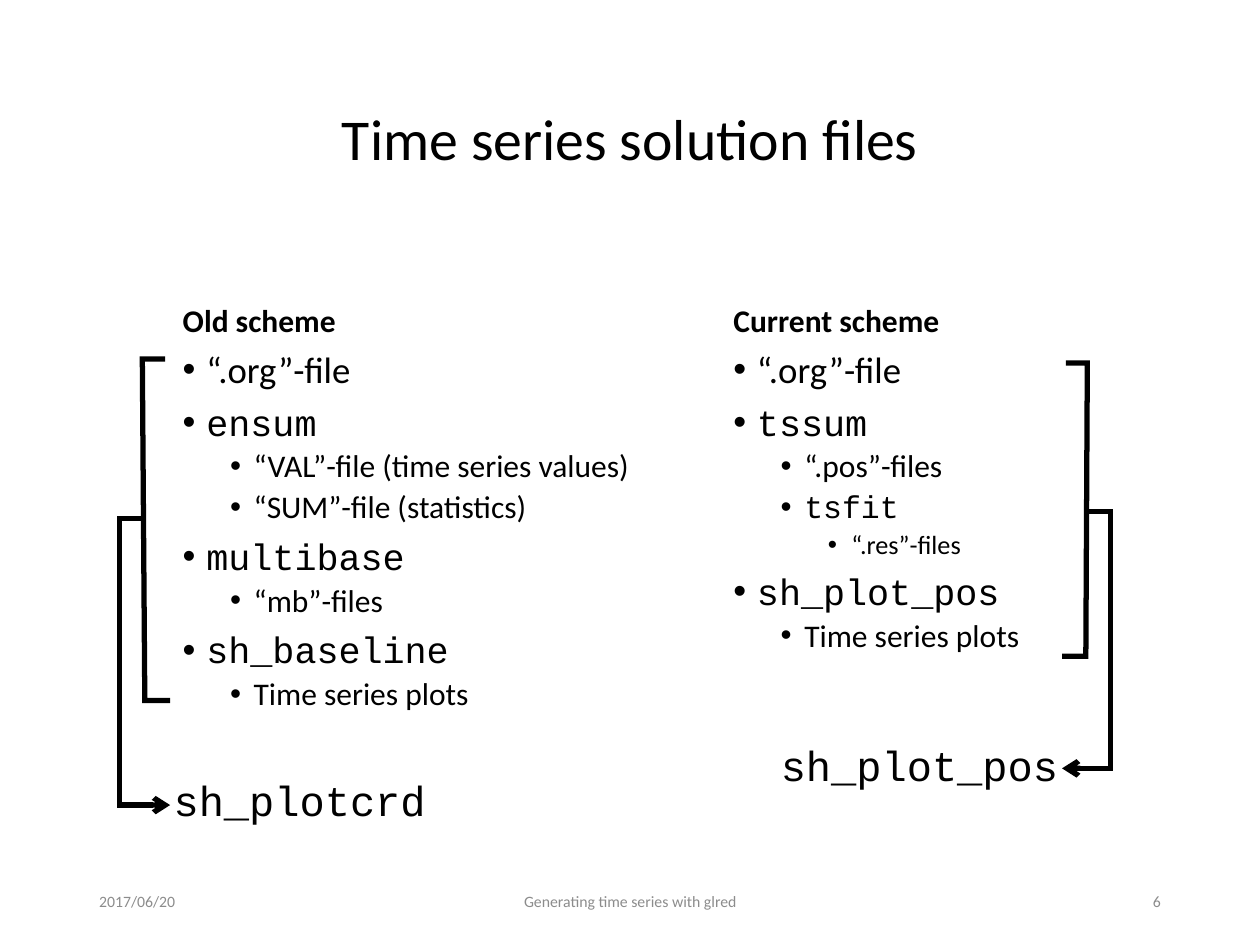
from lxml.etree import SubElement as Sub
from pptx import Presentation
from pptx.dml.color import RGBColor
from pptx.enum.text import MSO_ANCHOR as Anchor, MSO_AUTO_SIZE as Fit, PP_ALIGN as Align
from pptx.oxml.ns import qn
from pptx.util import Cm, Pt

BLACK = RGBColor(0x00, 0x00, 0x00)
GREY = RGBColor(0x8C, 0x8C, 0x8C)
SANS, MONO = "Calibri", "Courier New"
SIZES = (21, 18, 15)  # list text, by level

# List items: level, text, font
OLD = [
    (0, "“.org”-file", SANS),
    (0, "ensum", MONO),
    (1, "“VAL”-file (time series values)", SANS),
    (1, "“SUM”-file (statistics)", SANS),
    (0, "multibase", MONO),
    (1, "“mb”-files", SANS),
    (0, "sh_baseline", MONO),
    (1, "Time series plots", SANS),
]
NEW = [
    (0, "“.org”-file", SANS),
    (0, "tssum", MONO),
    (1, "“.pos”-files", SANS),
    (1, "tsfit", MONO),
    (2, "“.res”-files", SANS),
    (0, "sh_plot_pos", MONO),
    (1, "Time series plots", SANS),
]


def style(para, size, font=SANS, color=BLACK, bold=False):
    for run in para.runs:
        run.font.size = Pt(size)
        run.font.name = font
        run.font.color.rgb = color
        run.font.bold = bold


def place(shape, box, anchor):
    shape.left, shape.top, shape.width, shape.height = map(Cm, box)
    frame = shape.text_frame
    frame.auto_size = Fit.NONE
    frame.word_wrap = True
    frame.vertical_anchor = anchor
    return frame


def add_head(holder, box, text, size, anchor, align, bold=False):
    frame = place(holder, box, anchor)
    frame.text = text
    para = frame.paragraphs[0]
    para.alignment = align
    para.line_spacing = 0.9
    para.space_before = Pt(7.5 if bold else 0)
    style(para, size, bold=bold)


def add_list(holder, box, items):
    frame = place(holder, box, Anchor.TOP)
    for num, (level, text, font) in enumerate(items):
        para = frame.add_paragraph() if num else frame.paragraphs[0]
        para.text = text
        para.level = level
        para.line_spacing = 0.9
        para.space_before = Pt(3.8 if level else 7.5)
        style(para, SIZES[level], font)
        # Bullet with hanging indent
        props = para._p.get_or_add_pPr()
        props.set("marL", str(Pt(13.5 + 27 * level)))
        props.set("indent", str(-Pt(13.5)))
        Sub(props, qn("a:buFont"), typeface="Arial")
        Sub(props, qn("a:buChar"), char="•")


def add_text(slide, box, text, size, font=SANS, color=BLACK,
             align=Align.LEFT, anchor=Anchor.MIDDLE, wrap=True):
    frame = place(slide.shapes.add_textbox(0, 0, 0, 0), box, anchor)
    frame.word_wrap = wrap
    frame.text = text
    para = frame.paragraphs[0]
    para.alignment = align
    style(para, size, font, color)


def add_line(slide, points, arrow=False):
    first, *rest = [(Cm(x), Cm(y)) for x, y in points]
    pen = slide.shapes.build_freeform(*first)
    pen.add_line_segments(rest, close=False)
    shape = pen.convert_to_shape()
    shape.shadow.inherit = False
    shape.fill.background()
    shape.line.color.rgb = BLACK
    shape.line.width = Pt(3)
    ln = shape.line._get_or_add_ln()
    Sub(ln, qn("a:miter"), lim="800000")
    if arrow:
        Sub(ln, qn("a:tailEnd"), type="arrow")


def main():
    deck = Presentation()
    deck.slide_width, deck.slide_height = Cm(25.4), Cm(19.05)
    slide = deck.slides.add_slide(deck.slide_layouts[4])  # comparison
    title, *cols = slide.placeholders

    # Title and the two columns
    add_head(title, (1.75, 1.02, 21.9, 3.68), "Time series solution files",
             33, Anchor.MIDDLE, Align.CENTER)
    parts = [("Old scheme", OLD, 3.43, 10.74), ("Current scheme", NEW, 14.53, 10.8)]
    for (head, items, left, width), top, body in zip(parts, cols[::2], cols[1::2]):
        add_head(top, (left, 4.67, width, 2.29), head, 18,
                 Anchor.BOTTOM, Align.LEFT, bold=True)
        add_list(body, (left, 6.96, width, 10.24), items)

    # Footer
    for left, width, text, align in [
        (1.75, 5.72, "2017/06/20", Align.LEFT),
        (8.41, 8.59, "Generating time series with glred", Align.CENTER),
        (17.93, 5.72, "6", Align.RIGHT),
    ]:
        add_text(slide, (left, 17.65, width, 1.02), text, 9, color=GREY, align=align)

    # Plot scripts
    for box, text in [
        ((3.25, 15.49, 5.64, 1.27), "sh_plotcrd"),
        ((15.49, 14.78, 6.15, 1.27), "sh_plot_pos"),
    ]:
        add_text(slide, box, text, 24, MONO, anchor=Anchor.TOP, wrap=False)

    # Brackets, each with an arrow to its plot script
    add_line(slide, [(3.33, 7.24), (2.87, 7.24), (2.92, 14.12), (3.43, 14.12)])
    add_line(slide, [(2.9, 10.46), (2.41, 10.46), (2.41, 16.23), (3.43, 16.23)], True)
    add_line(slide, [(21.49, 7.32), (21.92, 7.32), (21.89, 13.23), (21.41, 13.23)])
    add_line(slide, [(21.92, 10.31), (22.38, 10.31), (22.38, 15.49), (21.41, 15.49)], True)

    deck.save("out.pptx")


if __name__ == "__main__":
    main()
